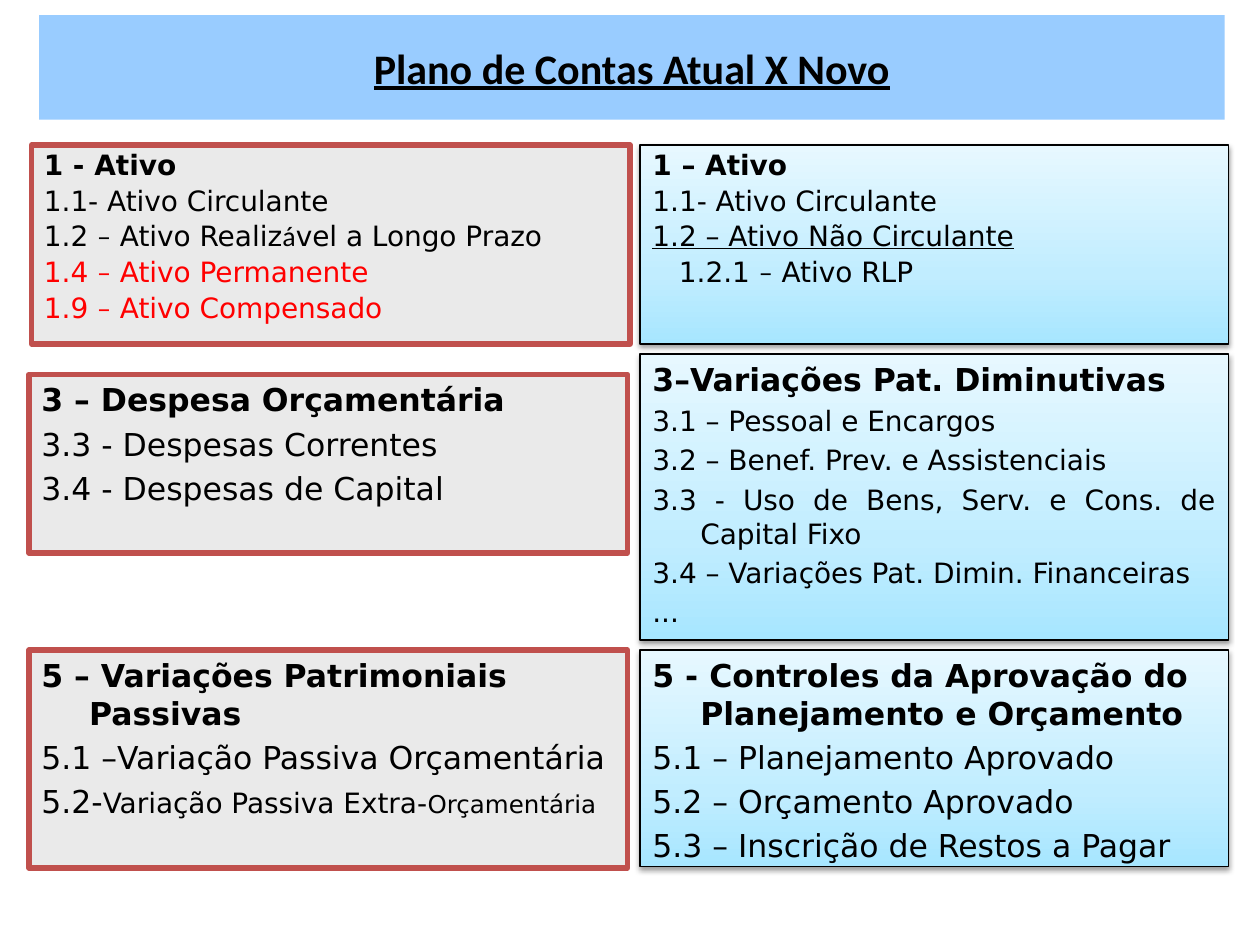
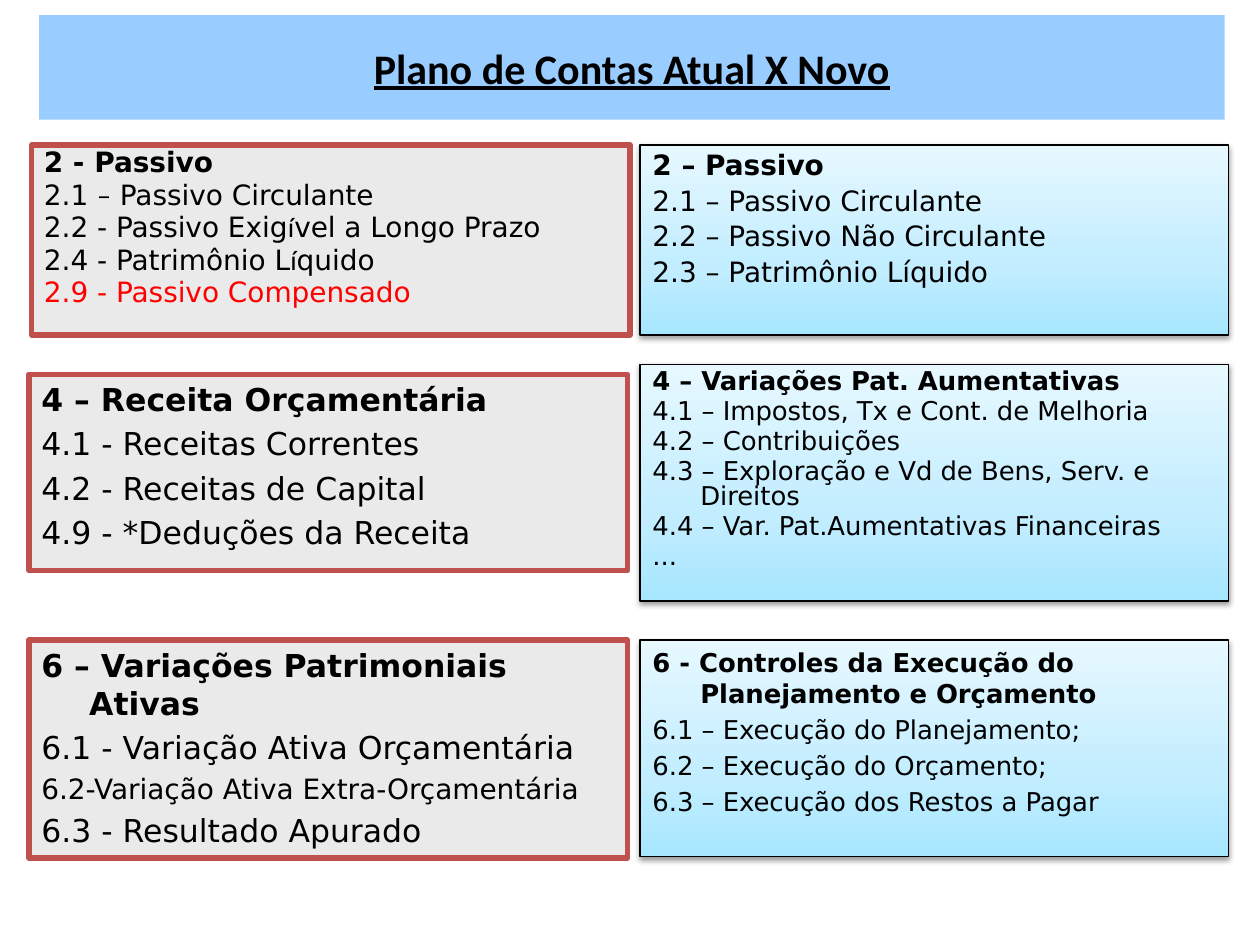
import copy

import pptx
import pptx.dml.color
import pptx.enum.shapes
import pptx.enum.text
import pptx.oxml
import pptx.oxml.ns
import pptx.util

Inches = pptx.util.Inches
Align = pptx.enum.text.PP_ALIGN
qn = pptx.oxml.ns.qn

TITLE = "Plano de Contas Atual X Novo"
TITLE_BAND = (0.31, 0.12, 9.41, 0.83)
BLACK, RED, BAND_BLUE = "000000", "FF0000", "99CCFF"
CURRENT_FILL, CURRENT_LINE = "EAEAEA", "C0504D"
NEW_GRADIENT = [(0, "A7E6FF"), (0.35, "C1EDFF"), (1, "E7F8FF")]
BODY_FONT, TITLE_FONT = "DejaVu Sans", "Calibri"
HANGING = 0.38
CURRENT_WIDTH, NEW_LEFT, NEW_WIDTH = 4.75, 5.08, 4.67


def line(*runs, indent=0, align=Align.LEFT, **style):
    """A line of runs; a run is a text or a (text, format) pair."""
    return {"runs": runs, "indent": indent, "align": align, "style": style}


def calibri(text):
    return text, {"font": TITLE_FONT}


# Each panel: left (None in the new plan's column), top, height,
# text size, line spacing, heading, lines
SLIDES = [
    [
        (0.25, 1.15, 1.58, 16, 0.9, "1 - Ativo", [
            line("1.1- Ativo Circulante"),
            line("1.2 ", calibri("–"), " Ativo Realiz", calibri("á"), "vel a Longo Prazo"),
            line("1.4 ", calibri("–"), " Ativo Permanente", color=RED),
            line("1.9 ", calibri("–"), " Ativo Compensado", color=RED),
        ]),
        (None, 1.15, 1.58, 16, 0.9, "1 – Ativo", [
            line("1.1- Ativo Circulante"),
            line("1.2 – Ativo Não Circulante", underline=True),
            line("1.2.1 ", calibri("–"), " Ativo RLP", indent=0.21),
        ]),
        (0.23, 2.97, 1.42, 18, 1, "3 – Despesa Orçamentária", [
            line("3.3 - Despesas Correntes"),
            line("3.4 - Despesas de Capital"),
        ]),
        (0.23, 5.16, 1.73, 18, 1, "5 – Variações Patrimoniais Passivas", [
            line("5.1 –Variação Passiva Orçamentária"),
            line("5.2-", ("Variação Passiva Extra-", {"size": 16}),
                 ("Orçamentária", {"size": 14})),
        ]),
        (None, 2.81, 2.27, 18, 1, "3–Variações Pat. Diminutivas", [
            line("3.1 – Pessoal e Encargos", size=16),
            line("3.2 – Benef. Prev. e Assistenciais", size=16),
            line("3.3 - Uso de Bens, Serv. e Cons. de\vCapital Fixo",
                 size=16, align=Align.JUSTIFY),
            line("3.4 – Variações Pat. Dimin. Financeiras", size=16),
            line("...", size=16),
        ]),
        (None, 5.16, 1.72, 18, 1, "5 - Controles da Aprovação do Planejamento e Orçamento", [
            line("5.1 – Planejamento Aprovado"),
            line("5.2 – Orçamento Aprovado"),
            line("5.3 – Inscrição de Restos a Pagar"),
        ]),
    ],
    [
        (0.25, 1.15, 1.51, 16, 0.8, "2 - Passivo", [
            line("2.1 ", calibri("–"), " Passivo Circulante"),
            line("2.2 - Passivo Exig", calibri("í"), "vel a Longo Prazo"),
            line("2.4 - Patrimônio L", calibri("í"), "quido"),
            line("2.9 - Passivo Compensado", color=RED),
        ]),
        (None, 1.15, 1.51, 16, 0.9, "2 – Passivo", [
            line("2.1 – Passivo Circulante"),
            line("2.2 – Passivo Não Circulante"),
            line("2.3 – Patrimônio Líquido"),
        ]),
        (0.23, 2.97, 1.56, 18, 1, "4 – Receita Orçamentária", [
            line("4.1 - Receitas Correntes"),
            line("4.2 - Receitas de Capital"),
            line("4.9 - *Deduções da Receita"),
        ]),
        (0.23, 5.08, 1.73, 18, 1, "6 – Variações Patrimoniais Ativas", [
            line("6.1 - Variação Ativa Orçamentária"),
            line("6.2-Variação Ativa Extra-Orçamentária", size=16),
            line("6.3 - Resultado Apurado"),
        ]),
        (None, 2.89, 1.88, 14.8, 0.8, "4 – Variações Pat. Aumentativas", [
            line("4.1 – Impostos, Tx e Cont. de Melhoria"),
            line("4.2 – Contribuições"),
            line("4.3 – Exploração e Vd de Bens, Serv. e Direitos"),
            line("4.4 – Var. Pat.Aumentativas Financeiras"),
            line("..."),
        ]),
        (None, 5.08, 1.72, 14.8, 1, "6 - Controles da Execução do Planejamento e Orçamento", [
            line("6.1 – Execução do Planejamento;"),
            line("6.2 – Execução do Orçamento;"),
            line("6.3 – Execução dos Restos a Pagar"),
        ]),
    ],
]


def rgb(value):
    return pptx.dml.color.RGBColor.from_string(value)


def add_text(paragraph, text, size=18, font=BODY_FONT, color=BLACK, bold=False, underline=False):
    for position, part in enumerate(text.split("\v")):
        if position:
            paragraph.add_line_break()
        run = paragraph.add_run()
        run.text = part
        run.font.size = pptx.util.Pt(size)
        run.font.name = font
        run.font.color.rgb = rgb(color)
        run.font.bold = bold
        run.font.underline = underline


def set_relative_space_before(paragraph, percent):
    paragraph.space_before = pptx.util.Pt(0)
    space = paragraph._p.pPr.find(qn("a:spcBef"))
    space.remove(space[0])
    space.makeelement(qn("a:spcPct"))
    space.append(space.makeelement(qn("a:spcPct"), {"val": str(percent * 1000)}))


def add_title(slide):
    title = slide.shapes.title
    title.left, title.top, title.width, title.height = map(Inches, TITLE_BAND)
    title.fill.solid()
    title.fill.fore_color.rgb = rgb(BAND_BLUE)
    frame = title.text_frame
    frame.auto_size = pptx.enum.text.MSO_AUTO_SIZE.NONE
    frame.vertical_anchor = pptx.enum.text.MSO_ANCHOR.MIDDLE
    paragraph = frame.paragraphs[0]
    paragraph.alignment = Align.CENTER
    add_text(paragraph, TITLE, size=24, font=TITLE_FONT, bold=True, underline=True)


def style_current(shape):
    shape.fill.solid()
    shape.fill.fore_color.rgb = rgb(CURRENT_FILL)
    shape.line.color.rgb = rgb(CURRENT_LINE)
    shape.line.width = pptx.util.Pt(3)


def style_new(shape):
    """Blue gradient rising to pale, thin black outline and soft shadow."""
    shape.fill.gradient()
    shape.fill.gradient_angle = 90
    properties = shape.element.spPr
    stops = properties.find(".//" + qn("a:gsLst"))
    stops.insert(1, copy.deepcopy(stops[0]))
    for stop, (position, color) in zip(shape.fill.gradient_stops, NEW_GRADIENT):
        stop.position = position
        stop.color.rgb = rgb(color)
    shape.line.color.rgb = rgb(BLACK)
    shape.line.width = pptx.util.Pt(0.75)
    properties.find(qn("a:effectLst")).append(pptx.oxml.parse_xml(
        f'<a:outerShdw {pptx.oxml.ns.nsdecls("a")} blurRad="40000" dist="20000" '
        f'dir="5400000" rotWithShape="0"><a:srgbClr val="{BLACK}">'
        '<a:alpha val="38000"/></a:srgbClr></a:outerShdw>'))


def add_panel(slide, left, top, height, size, spacing, heading, lines):
    is_new = left is None
    box = (NEW_LEFT, top, NEW_WIDTH, height) if is_new else (left, top, CURRENT_WIDTH, height)
    shape = slide.shapes.add_shape(
        pptx.enum.shapes.MSO_SHAPE.RECTANGLE, *map(Inches, box))
    shape.shadow.inherit = False
    (style_new if is_new else style_current)(shape)

    frame = shape.text_frame
    frame.word_wrap = True
    frame.vertical_anchor = pptx.enum.text.MSO_ANCHOR.TOP
    for position, entry in enumerate([line(heading, bold=True), *lines]):
        paragraph = frame.add_paragraph() if position else frame.paragraphs[0]
        paragraph.alignment = entry["align"]
        paragraph.line_spacing = float(spacing)
        set_relative_space_before(paragraph, 20)
        properties = paragraph._p.pPr
        properties.set("marL", str(Inches(HANGING + entry["indent"])))
        properties.set("indent", str(-Inches(HANGING)))
        for run in entry["runs"]:
            text, override = (run, {}) if isinstance(run, str) else run
            add_text(paragraph, text, **{"size": size, **entry["style"], **override})


def main():
    presentation = pptx.Presentation()
    presentation.slide_width = Inches(10)
    presentation.slide_height = Inches(7.5)
    for panels in SLIDES:
        slide = presentation.slides.add_slide(presentation.slide_layouts[5])
        add_title(slide)
        for panel in panels:
            add_panel(slide, *panel)
    presentation.save("out.pptx")


if __name__ == "__main__":
    main()
